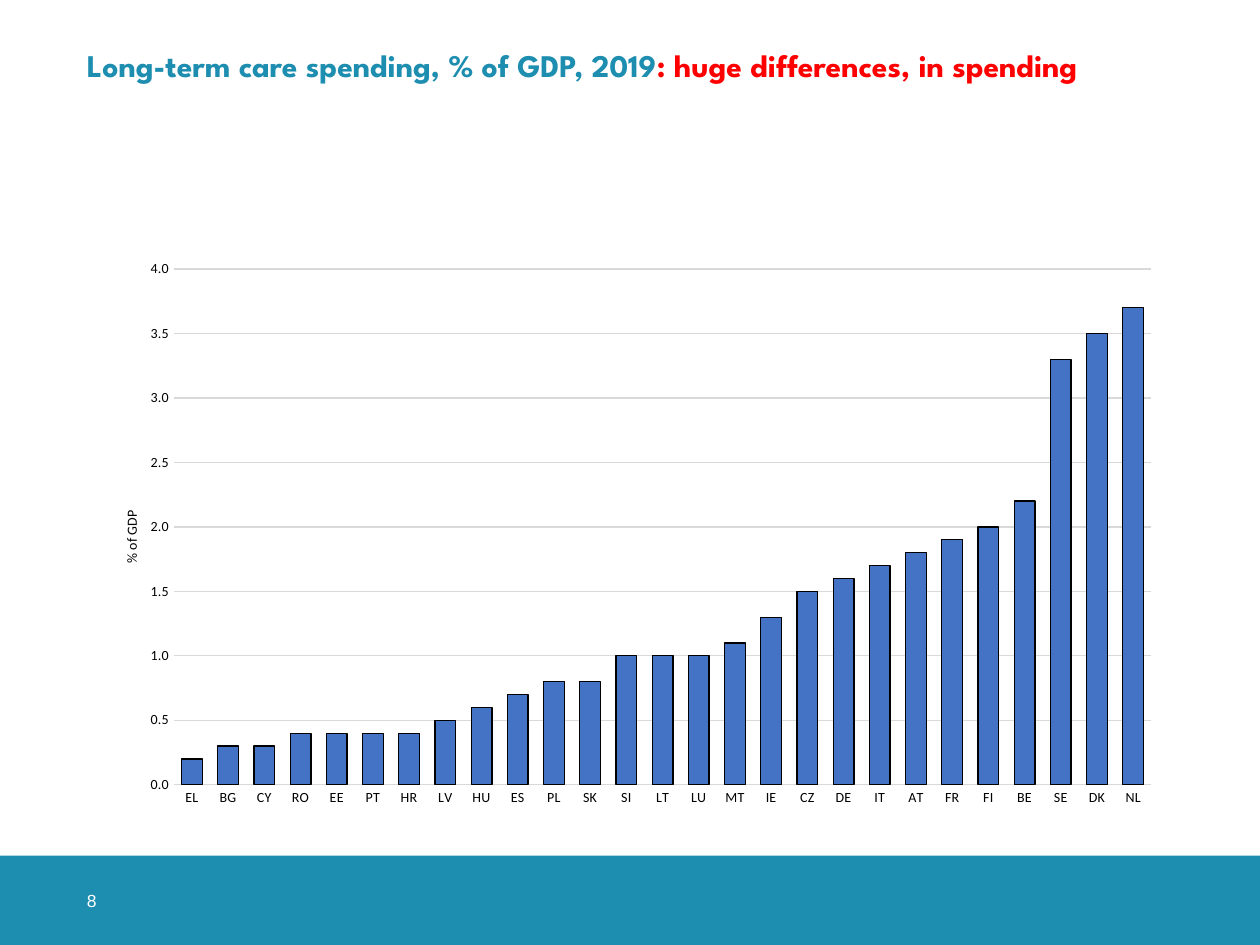
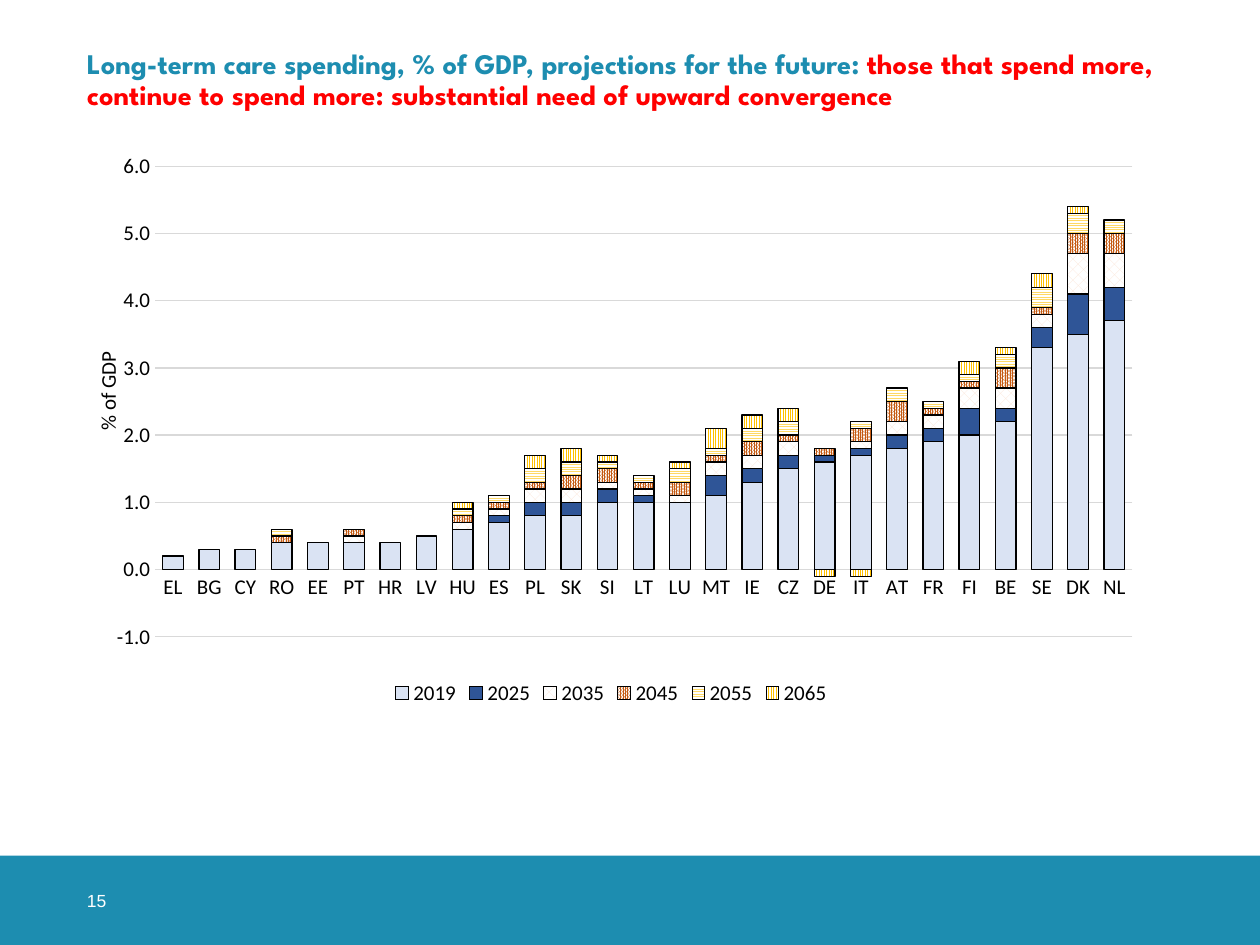
from lxml import etree
from pptx import Presentation
from pptx.chart.data import CategoryChartData
from pptx.dml.color import RGBColor
from pptx.enum.chart import XL_CHART_TYPE, XL_LEGEND_POSITION, XL_TICK_MARK
from pptx.enum.dml import MSO_PATTERN
from pptx.enum.shapes import MSO_SHAPE
from pptx.enum.text import MSO_ANCHOR
from pptx.oxml.ns import qn
from pptx.util import Inches, Pt

STACKED = XL_CHART_TYPE.COLUMN_STACKED
BOTTOM = XL_LEGEND_POSITION.BOTTOM
NO_TICKS = XL_TICK_MARK.NONE
RECTANGLE = MSO_SHAPE.RECTANGLE
TOP, MIDDLE = MSO_ANCHOR.TOP, MSO_ANCHOR.MIDDLE
LIGHT_DOTS, DENSE_DOTS, ROWS, STRIPES = (
    MSO_PATTERN.from_xml(preset)
    for preset in ("pct40", "pct90", "narHorz", "narVert"))

TEAL = RGBColor(0x1D, 0x8D, 0xB0)
RED = RGBColor(0xFF, 0x00, 0x00)
WHITE = RGBColor(0xFF, 0xFF, 0xFF)
BLACK = RGBColor(0x00, 0x00, 0x00)
GRID_GREY = RGBColor(0xD9, 0xD9, 0xD9)
BLUE = RGBColor(0x44, 0x72, 0xC4)
PALE_BLUE = RGBColor(0xDA, 0xE3, 0xF3)
DARK_BLUE = RGBColor(0x2F, 0x55, 0x97)
PEACH = RGBColor(0xFB, 0xE5, 0xD6)
RUST = RGBColor(0xC5, 0x5A, 0x11)
LIGHT_GOLD = RGBColor(0xFF, 0xD9, 0x66)
GOLD = RGBColor(0xFF, 0xC0, 0x00)

TITLE_FONT, NUMBER_FONT, CHART_FONT = "League Spartan", "Arial", "Calibri"
MARGIN, CONTENT_WIDTH = 0.69, 8.62
BAND_TOP, BAND_HEIGHT = 6.79, 0.71

COUNTRIES = ("EL BG CY RO EE PT HR LV HU ES PL SK SI LT LU MT IE CZ DE IT "
             "AT FR FI BE SE DK NL").split()
SPENDING_2019 = [0.2, 0.3, 0.3, 0.4, 0.4, 0.4, 0.4, 0.5, 0.6, 0.7, 0.8, 0.8, 1, 1,
                 1, 1.1, 1.3, 1.5, 1.6, 1.7, 1.8, 1.9, 2, 2.2, 3.3, 3.5, 3.7]
PROJECTIONS = {
    "2019": SPENDING_2019,
    "2025": [0, 0, 0, 0, 0, 0, 0, 0, 0, 0.1, 0.2, 0.2, 0.2, 0.1, 0, 0.3, 0.2, 0.2,
             0.1, 0.1, 0.2, 0.2, 0.4, 0.2, 0.3, 0.6, 0.5],
    "2035": [0, 0, 0, 0, 0, 0.1, 0, 0, 0.1, 0.1, 0.2, 0.2, 0.1, 0.1, 0.1, 0.2, 0.2,
             0.2, 0, 0.1, 0.2, 0.2, 0.3, 0.3, 0.2, 0.6, 0.5],
    "2045": [0, 0, 0, 0.1, 0, 0.1, 0, 0, 0.1, 0.1, 0.1, 0.2, 0.2, 0.1, 0.2, 0.1, 0.2,
             0.1, 0.1, 0.2, 0.3, 0.1, 0.1, 0.3, 0.1, 0.3, 0.3],
    "2055": [0, 0, 0, 0.1, 0, 0, 0, 0, 0.1, 0.1, 0.2, 0.2, 0.1, 0.1, 0.2, 0.1, 0.2,
             0.2, 0, 0.1, 0.2, 0.1, 0.1, 0.2, 0.3, 0.3, 0.2],
    "2065": [0, 0, 0, 0, 0, 0, 0, 0, 0.1, 0, 0.2, 0.2, 0.1, 0, 0.1, 0.3, 0.2, 0.2,
             -0.1, -0.1, 0, 0, 0.2, 0.1, 0.2, 0.1, 0],
}
# Each fill is a foreground colour and, where hatched, a pattern
PROJECTION_FILLS = [
    (PALE_BLUE, None),
    (DARK_BLUE, None),
    (PEACH, LIGHT_DOTS),
    (RUST, DENSE_DOTS),
    (LIGHT_GOLD, ROWS),
    (GOLD, STRIPES),
]


def set_font(font, name, size, color, bold=False):
    font.name, font.size, font.bold = name, Pt(size), bold
    font.color.rgb = color


def set_line(line, color):
    line.color.rgb = color
    line.width = Pt(0.75)


def set_layout(parent, index, **fractions):
    """Place a chart part by fractions of the chart's size (x, y, w, h)."""
    for automatic in parent.findall(qn("c:layout")):
        parent.remove(automatic)
    layout = etree.Element(qn("c:layout"))
    manual = etree.SubElement(layout, qn("c:manualLayout"))
    settings = {"xMode": "edge", "yMode": "edge", **fractions}
    if "w" in fractions:
        settings = {"layoutTarget": "inner", **settings}
    for tag, value in settings.items():
        etree.SubElement(manual, qn(f"c:{tag}")).set("val", str(value))
    parent.insert(index, layout)


class Deck:
    """Holds the presentation's style and the slide being built."""

    def __init__(self):
        self.presentation = Presentation()
        self.presentation.slide_width = Inches(10)
        self.presentation.slide_height = Inches(7.5)
        self.slide = None

    def start_slide(self, number, topic, message, title_size):
        layout = self.presentation.slide_layouts[6]
        self.slide = self.presentation.slides.add_slide(layout)
        self.band()
        self.title(topic, message, title_size)
        self.number(number)

    def band(self):
        band = self.slide.shapes.add_shape(
            RECTANGLE, 0, Inches(BAND_TOP), Inches(10), Inches(BAND_HEIGHT))
        band.shadow.inherit = False
        band.fill.solid()
        band.fill.fore_color.rgb = TEAL
        band.line.fill.background()

    def text(self, left, top, width, height, anchor):
        """Add an unpadded text box and return its first paragraph."""
        frame = self.slide.shapes.add_textbox(
            Inches(left), Inches(top), Inches(width), Inches(height)).text_frame
        frame.word_wrap = True
        frame.vertical_anchor = anchor
        frame.margin_left = frame.margin_right = 0
        frame.margin_top = frame.margin_bottom = 0
        return frame.paragraphs[0]

    def title(self, topic, message, size):
        paragraph = self.text(MARGIN, 0.4, CONTENT_WIDTH, 1.45, TOP)
        paragraph.line_spacing = 0.9
        set_font(paragraph.font, TITLE_FONT, size, TEAL, bold=True)
        for wording, color in ((topic, TEAL), (message, RED)):
            run = paragraph.add_run()
            run.text = wording
            run.font.color.rgb = color

    def number(self, number):
        paragraph = self.text(MARGIN, BAND_TOP, 0.71, BAND_HEIGHT, MIDDLE)
        paragraph.text = str(number)
        set_font(paragraph.font, NUMBER_FONT, 10, WHITE)

    def spending_chart(self, left, top, series, fills, size, limits, step, plot,
                       axis_title, legend=False):
        data = CategoryChartData(number_format="0.0")
        data.categories = COUNTRIES
        for name, values in series.items():
            data.add_series(name, values)
        chart = self.slide.shapes.add_chart(
            STACKED, Inches(left), Inches(top), Inches(CONTENT_WIDTH), Inches(4.5),
            data).chart
        set_font(chart.font, CHART_FONT, size, BLACK)
        chart.has_title = False
        chart.has_legend = legend
        if legend:
            chart.legend.position = BOTTOM
            chart.legend.include_in_layout = False
            set_font(chart.legend.font, CHART_FONT, size, BLACK)
        self.columns(chart.plots[0], fills)
        self.axes(chart, size, limits, step, axis_title)
        plot_area = chart.plots[0]._element.getparent()
        set_layout(plot_area, 0, **plot)

    def columns(self, plot, fills):
        plot.gap_width, plot.overlap = 75, 100
        plot.vary_by_categories = False
        for series, (color, pattern) in zip(plot.series, fills):
            series.invert_if_negative = False
            fill = series.format.fill
            if pattern is None:
                fill.solid()
            else:
                fill.patterned()
                fill.pattern = pattern
                fill.back_color.rgb = WHITE
            fill.fore_color.rgb = color
            set_line(series.format.line, BLACK)

    def axes(self, chart, size, limits, step, title_place):
        for axis in (chart.category_axis, chart.value_axis):
            axis.major_tick_mark = axis.minor_tick_mark = NO_TICKS
            set_font(axis.tick_labels.font, CHART_FONT, size, BLACK)
        set_line(chart.category_axis.format.line, GRID_GREY)
        values = chart.value_axis
        values.minimum_scale, values.maximum_scale = limits
        values.major_unit = step
        values.tick_labels.number_format = "0.0"
        values.tick_labels.number_format_is_linked = False
        values.format.line.fill.background()
        set_line(values.major_gridlines.format.line, GRID_GREY)

        frame = values.axis_title.text_frame
        frame.text = "% of GDP"
        set_font(frame.paragraphs[0].font, CHART_FONT, size, BLACK)
        title = values.axis_title._element
        body = title.find(f".//{qn('a:bodyPr')}")
        body.set("rot", "-5400000")
        body.set("vert", "horz")
        set_layout(title, 1, **title_place)


def main():
    deck = Deck()

    deck.start_slide(8, "Long-term care spending, % of GDP, 2019",
                     ": huge differences, in spending", 18)
    deck.spending_chart(
        MARGIN, 2, {"Series 1": SPENDING_2019}, [(BLUE, None)], size=8,
        limits=(0, 4), step=0.5, plot={"x": 0.08, "y": 0.03, "w": 0.9, "h": 0.91},
        axis_title={"x": 0.03, "y": 0.45})

    deck.start_slide(
        15, "Long-term care spending, % of GDP, projections for the future: ",
        "those that spend more, continue to spend more: "
        "substantial need of upward convergence", 16.2)
    deck.spending_chart(
        0.54, 1.14, PROJECTIONS, PROJECTION_FILLS, size=12,
        limits=(-1, 6), step=1, plot={"x": 0.08, "y": 0.04, "w": 0.9, "h": 0.83},
        axis_title={"x": 0.02, "y": 0.36}, legend=True)

    deck.presentation.save("out.pptx")


if __name__ == "__main__":
    main()
